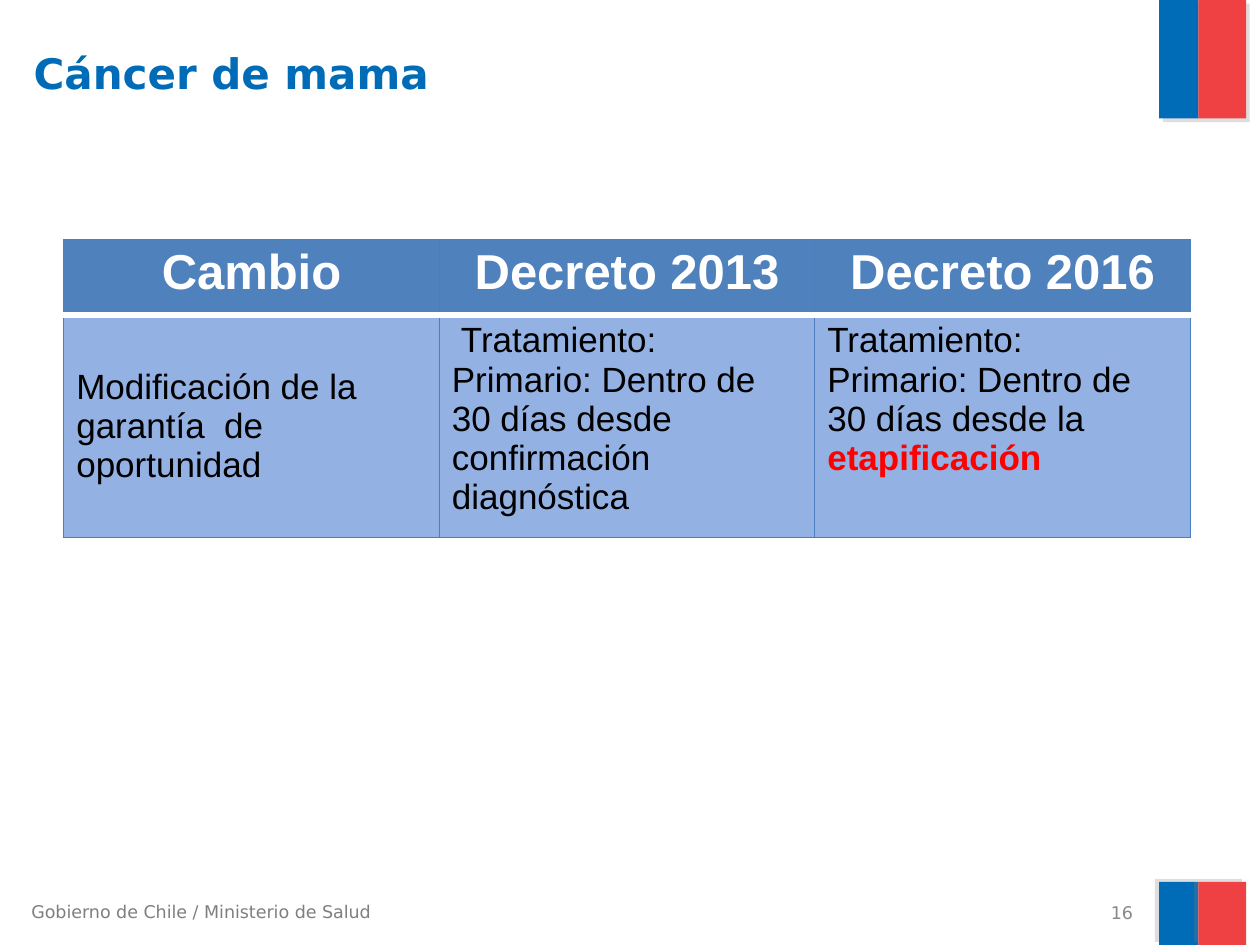
from lxml.etree import SubElement
from pptx import Presentation
from pptx.dml.color import RGBColor
from pptx.enum.shapes import MSO_SHAPE
from pptx.enum.text import MSO_ANCHOR, PP_ALIGN
from pptx.oxml.ns import qn
from pptx.util import Pt

BLUE, RED = "006CB7", "EF4144"
HEAD, BODY, EDGE = "4F81BD", "93B1E3", "4B7EBC"
SANS = "DejaVu Sans"


def color(code):
    return RGBColor.from_string(code)


def style(font, name, size, code, bold=False):
    font.name, font.size, font.bold = name, Pt(size), bold
    font.color.rgb = color(code)


def label(slide, box, text, size, code, bold=False,
          align=PP_ALIGN.LEFT, anchor=MSO_ANCHOR.TOP):
    frame = slide.shapes.add_textbox(*map(Pt, box)).text_frame
    frame.word_wrap = True
    frame.vertical_anchor = anchor
    para = frame.paragraphs[0]
    para.text, para.alignment = text, align
    style(para.font, SANS, size, code, bold)


def shade(shape, angle):
    """Cast a soft grey shadow at an angle in degrees."""
    shape.shadow.inherit = False
    effects = shape._element.spPr.find(qn("a:effectLst"))
    outer = SubElement(effects, qn("a:outerShdw"), dist=str(Pt(3)),
                       dir=str(angle * 60000), algn="ctr", rotWithShape="0")
    tone = SubElement(outer, qn("a:srgbClr"), val="808080")
    SubElement(tone, qn("a:alpha"), val="25000")


def stripes(slide, box, angle):
    """Blue and red bars side by side, the blue taking 45% of the width."""
    left, top, width, height = box
    split = width * 0.45
    for code, x, w in ((BLUE, left, split), (RED, left + split, width - split)):
        bar = slide.shapes.add_shape(
            MSO_SHAPE.RECTANGLE, Pt(x), Pt(top), Pt(w), Pt(height))
        bar.fill.solid()
        bar.fill.fore_color.rgb = color(code)
        bar.line.fill.background()
        shade(bar, angle)


def paint(cell, code, edges):
    """Borders go in before the fill, as the schema orders them."""
    props = cell._tc.get_or_add_tcPr()
    for side in "LRTB":
        tone, width = edges.get(side, (EDGE, 0.5))
        line = SubElement(props, qn(f"a:ln{side}"), w=str(Pt(width)))
        fill = SubElement(line, qn("a:solidFill"))
        SubElement(fill, qn("a:srgbClr"), val=tone)
    cell.fill.solid()
    cell.fill.fore_color.rgb = color(code)


def compare(slide, box, heads, texts):
    """Each body cell is a list of paragraphs, each a list of runs;
    every run after the first in a paragraph is stressed."""
    table = slide.shapes.add_table(2, len(heads), *map(Pt, box)).table
    table.horz_banding = False
    table.rows[0].height, table.rows[1].height = Pt(43.2), Pt(94.3)
    rule = ("FFFFFF", 3.78)
    for col, (head, paras) in enumerate(zip(heads, texts)):
        cell = table.cell(0, col)
        paint(cell, HEAD, {"B": rule})
        para = cell.text_frame.paragraphs[0]
        para.text, para.alignment = head, PP_ALIGN.CENTER
        style(para.font, "Arial", 28, "FFFFFF", True)

        cell = table.cell(1, col)
        paint(cell, BODY, {"T": rule})
        frame = cell.text_frame
        for row, runs in enumerate(paras):
            para = frame.add_paragraph() if row else frame.paragraphs[0]
            style(para.font, "Arial", 20, "000000")
            for spot, text in enumerate(runs):
                run = para.add_run()
                run.text = text
                if spot:
                    style(run.font, "Arial", 20, "FF0000", True)
    table.cell(1, 0).vertical_anchor = MSO_ANCHOR.MIDDLE


def main():
    deck = Presentation()
    deck.slide_width, deck.slide_height = Pt(720), Pt(540)
    slide = deck.slides.add_slide(deck.slide_layouts[6])
    stripes(slide, (662.4, 0, 49.7, 67.7), 45)
    stripes(slide, (662.4, 504, 49.7, 36), 215)
    label(slide, (10.8, 511.2, 217.4, 19.4),
          "Gobierno de Chile / Ministerio de Salud", 10, "7F7F7F")
    label(slide, (12.2, 23.8, 643, 90), "Cáncer de mama", 24, BLUE, True)
    compare(
        slide, (36.4, 136.8, 643.8, 137.5),
        ("Cambio", "Decreto 2013", "Decreto 2016"),
        (
            [["Modificación de la garantía  de oportunidad"]],
            [[" Tratamiento:"],
             ["Primario: Dentro de 30 días desde confirmación diagnóstica"]],
            [["Tratamiento:"],
             ["Primario: Dentro de 30 días desde la ", "etapificación"]],
        ))
    label(slide, (486.7, 514.1, 167.8, 15.1), "16", 10, "898989",
          align=PP_ALIGN.RIGHT, anchor=MSO_ANCHOR.MIDDLE)
    deck.save("out.pptx")


if __name__ == "__main__":
    main()
